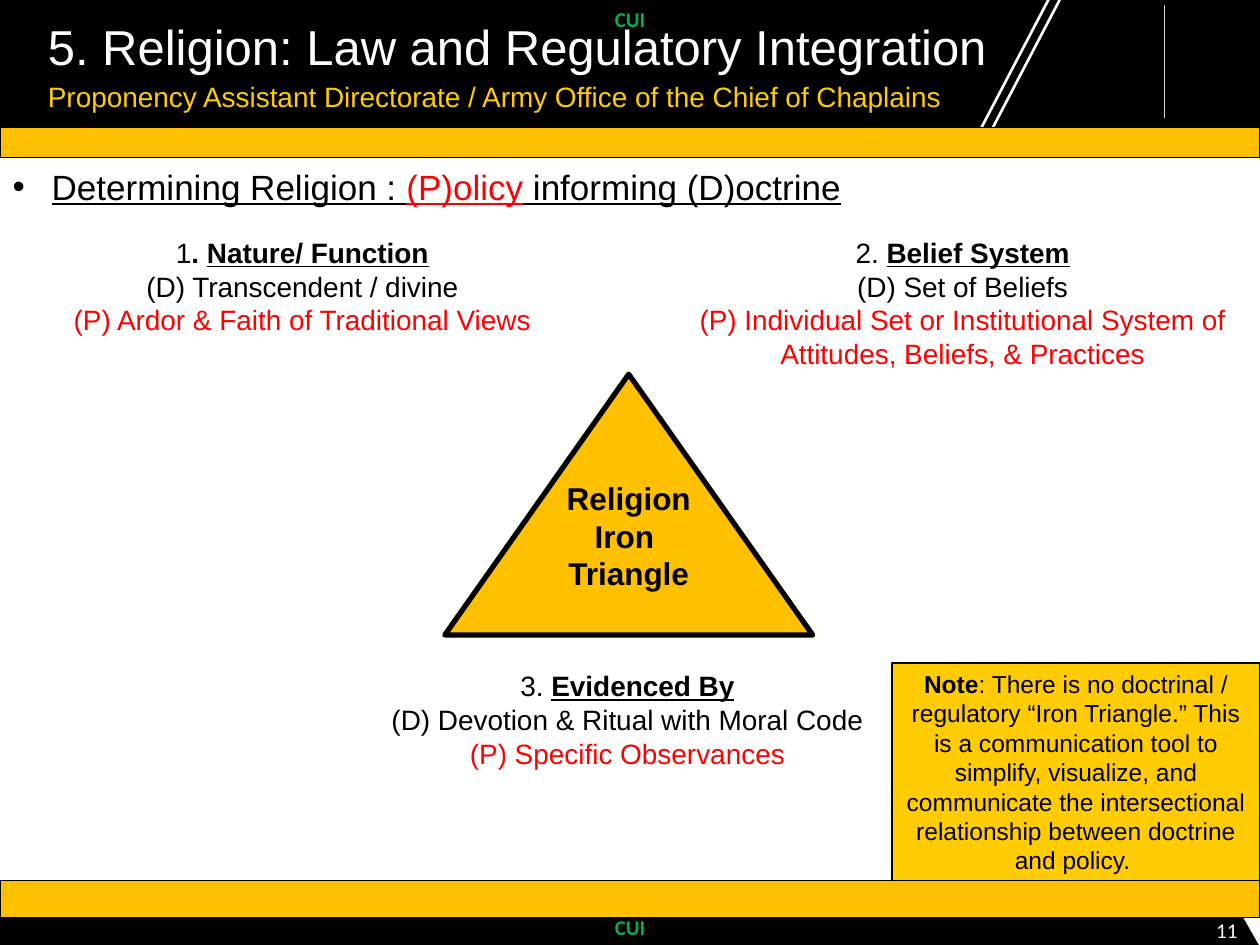
from dataclasses import dataclass

from lxml import etree
from pptx import Presentation
from pptx.dml.color import RGBColor
from pptx.enum.shapes import MSO_CONNECTOR, MSO_SHAPE
from pptx.enum.text import MSO_ANCHOR, MSO_AUTO_SIZE, PP_ALIGN
from pptx.oxml.ns import qn
from pptx.util import Inches, Pt

RECTANGLE = MSO_SHAPE.RECTANGLE
TRIANGLE = MSO_SHAPE.ISOSCELES_TRIANGLE
STRAIGHT = MSO_CONNECTOR.STRAIGHT
TOP, MIDDLE, BOTTOM = MSO_ANCHOR.TOP, MSO_ANCHOR.MIDDLE, MSO_ANCHOR.BOTTOM
LEFT, CENTER, RIGHT = PP_ALIGN.LEFT, PP_ALIGN.CENTER, PP_ALIGN.RIGHT
NO_AUTOFIT = MSO_AUTO_SIZE.NONE


@dataclass(frozen=True)
class Theme:
    font: str = "Arial"
    marking_font: str = "Calibri"
    black: str = "000000"
    white: str = "FFFFFF"
    off_white: str = "F9F9F9"
    grey: str = "D0D0D0"
    gold: str = "FFC000"
    bright_gold: str = "FFCC01"
    red: str = "FF0000"
    green: str = "00B050"
    title: int = 28
    heading: int = 20
    emphasis: int = 18
    body: int = 16
    note: int = 14
    marking: int = 12


class SlideBuilder:
    """Holds the theme and the current slide and adds each kind of element."""

    def __init__(self, slide, theme):
        self.slide = slide
        self.theme = theme

    def set_text(self, shape, paragraphs, size, color, font=None, align=LEFT,
                 anchor=TOP, spacing=1.0, indent=None):
        frame = shape.text_frame
        frame.word_wrap = True
        frame.auto_size = NO_AUTOFIT
        frame.vertical_anchor = anchor
        for index, runs in enumerate(paragraphs):
            paragraph = frame.add_paragraph() if index else frame.paragraphs[0]
            if indent is not None:
                self.set_bullet(paragraph, indent)
            paragraph.alignment = align
            paragraph.line_spacing = spacing
            paragraph.space_before = Pt(0)
            for text, style in runs:
                run = paragraph.add_run()
                run.text = text
                run.font.name = font or self.theme.font
                run.font.size = Pt(size)
                run.font.bold = "b" in style
                run.font.underline = "u" in style
                run_color = self.theme.red if "r" in style else color
                run.font.color.rgb = RGBColor.from_string(run_color)

    def set_bullet(self, paragraph, indent):
        properties = paragraph._p.get_or_add_pPr()
        properties.set("marL", str(Inches(indent)))
        properties.set("indent", str(-Inches(indent)))
        if indent:
            etree.SubElement(properties, qn("a:buChar")).set("char", "•")
        else:
            etree.SubElement(properties, qn("a:buNone"))

    def fill_placeholder(self, index, box, paragraphs, size, color, **options):
        shape = self.slide.placeholders[index]
        shape.left, shape.top, shape.width, shape.height = map(Inches, box)
        self.slide.shapes._spTree.append(shape._element)
        self.set_text(shape, paragraphs, size, color, **options)

    def add_text(self, box, paragraphs, size, color, **options):
        shape = self.slide.shapes.add_textbox(*map(Inches, box))
        self.set_text(shape, paragraphs, size, color, **options)

    def add_shape(self, kind, box, fill, line, width):
        shape = self.slide.shapes.add_shape(kind, *map(Inches, box))
        shape.shadow.inherit = False
        shape.fill.solid()
        shape.fill.fore_color.rgb = RGBColor.from_string(fill)
        shape.line.color.rgb = RGBColor.from_string(line)
        shape.line.width = Pt(width)
        return shape

    def add_line(self, points, color, width):
        line = self.slide.shapes.add_connector(STRAIGHT, *map(Inches, points))
        line.line.color.rgb = RGBColor.from_string(color)
        line.line.width = Pt(width)
        etree.SubElement(line._element.spPr, qn("a:effectLst"))


def add_frame(builder):
    theme = builder.theme
    builder.add_shape(RECTANGLE, (0, 7.28, 10, 0.22), theme.black, theme.black, 1)
    corner = builder.add_shape(TRIANGLE, (9.46, 6.96, 0.84, 0.24),
                               theme.white, theme.off_white, 1)
    corner.rotation = 270
    builder.add_shape(RECTANGLE, (0, 0, 10, 1), theme.black, theme.black, 1)
    for left in (7.66, 7.75):
        builder.add_line((left, 1.26, left + 0.67, -0.02), theme.white, 1.5)
    builder.add_line((9.24, 0.04, 9.24, 0.94), theme.grey, 0.5)
    for top, height in ((-0.05, 0.4), (7.2, 0.32)):
        builder.add_text((3.31, top, 3.38, height), [[("CUI", "b")]],
                         theme.marking, theme.green, font=theme.marking_font,
                         align=CENTER, anchor=MIDDLE)
    builder.add_text((7.67, 7.18, 2.25, 0.4), [[("11", "")]],
                     theme.marking, theme.white, font=theme.marking_font,
                     align=RIGHT, anchor=MIDDLE)
    for top, height in ((1.01, 0.24), (6.99, 0.29)):
        builder.add_shape(RECTANGLE, (0, top, 10, height),
                          theme.gold, theme.black, 0.75)


def add_headings(builder):
    theme = builder.theme
    subtitle = "Proponency Assistant Directorate / Army Office of the Chief of Chaplains"
    builder.fill_placeholder(1, (0.28, 0.61, 7.84, 0.3), [[(subtitle, "")]],
                             theme.body, theme.bright_gold, spacing=0.9, indent=0)
    builder.fill_placeholder(0, (0.28, 0.07, 7.84, 0.64),
                             [[("5. Religion: Law and Regulatory Integration", "")]],
                             theme.title, theme.white, anchor=MIDDLE, spacing=0.9)
    builder.fill_placeholder(2, (0, 1.26, 10, 5.72),
                             [[("Determining Religion : ", "u"), ("(P)olicy", "ur"),
                               (" informing (D)octrine", "u")]],
                             theme.heading, theme.black, indent=0.31)


def add_iron_triangle(builder):
    theme = builder.theme
    triangle = builder.add_shape(TRIANGLE, (3.53, 2.97, 2.92, 2.07),
                                 theme.gold, theme.black, 3)
    builder.set_text(triangle, [[(word, "b")] for word in ("Religion", "Iron ", "Triangle")],
                     theme.emphasis, theme.black, align=CENTER, anchor=BOTTOM)
    triangle.text_frame.margin_bottom = Inches(0.34)

    corners = (
        ((0.36, 1.82, 4.08, 0.91), [("1", ""), (". ", "b"), ("Nature/ Function", "bu")],
         "(D) Transcendent / divine", "(P) Ardor & Faith of Traditional Views"),
        ((5.2, 1.82, 4.88, 1.18), [("2. ", ""), ("Belief System", "bu")],
         "(D) Set of Beliefs",
         "(P) Individual Set or Institutional System of Attitudes, Beliefs, & Practices"),
        ((2, 5.26, 5.96, 0.91), [("3. ", ""), ("Evidenced By", "bu")],
         "(D) Devotion & Ritual with Moral Code", "(P) Specific Observances"),
    )
    for box, heading, doctrine, policy in corners:
        builder.add_text(box, [heading, [(doctrine, "")], [(policy, "r")]],
                         theme.body, theme.black, align=CENTER)


def add_note(builder):
    theme = builder.theme
    note = builder.add_shape(RECTANGLE, (7.08, 5.26, 2.92, 1.73),
                             theme.bright_gold, theme.black, 1)
    message = (": There is no doctrinal / regulatory “Iron Triangle.” This is a "
               "communication tool to simplify, visualize, and communicate the "
               "intersectional relationship between doctrine and policy. ")
    builder.set_text(note, [[("Note", "b"), (message, "")]],
                     theme.note, theme.black, align=CENTER)


def main():
    presentation = Presentation()
    presentation.slide_width = Inches(10)
    presentation.slide_height = Inches(7.5)
    slide = presentation.slides.add_slide(presentation.slide_layouts[3])
    builder = SlideBuilder(slide, Theme())
    add_frame(builder)
    add_headings(builder)
    add_iron_triangle(builder)
    add_note(builder)
    presentation.save("out.pptx")


if __name__ == "__main__":
    main()
